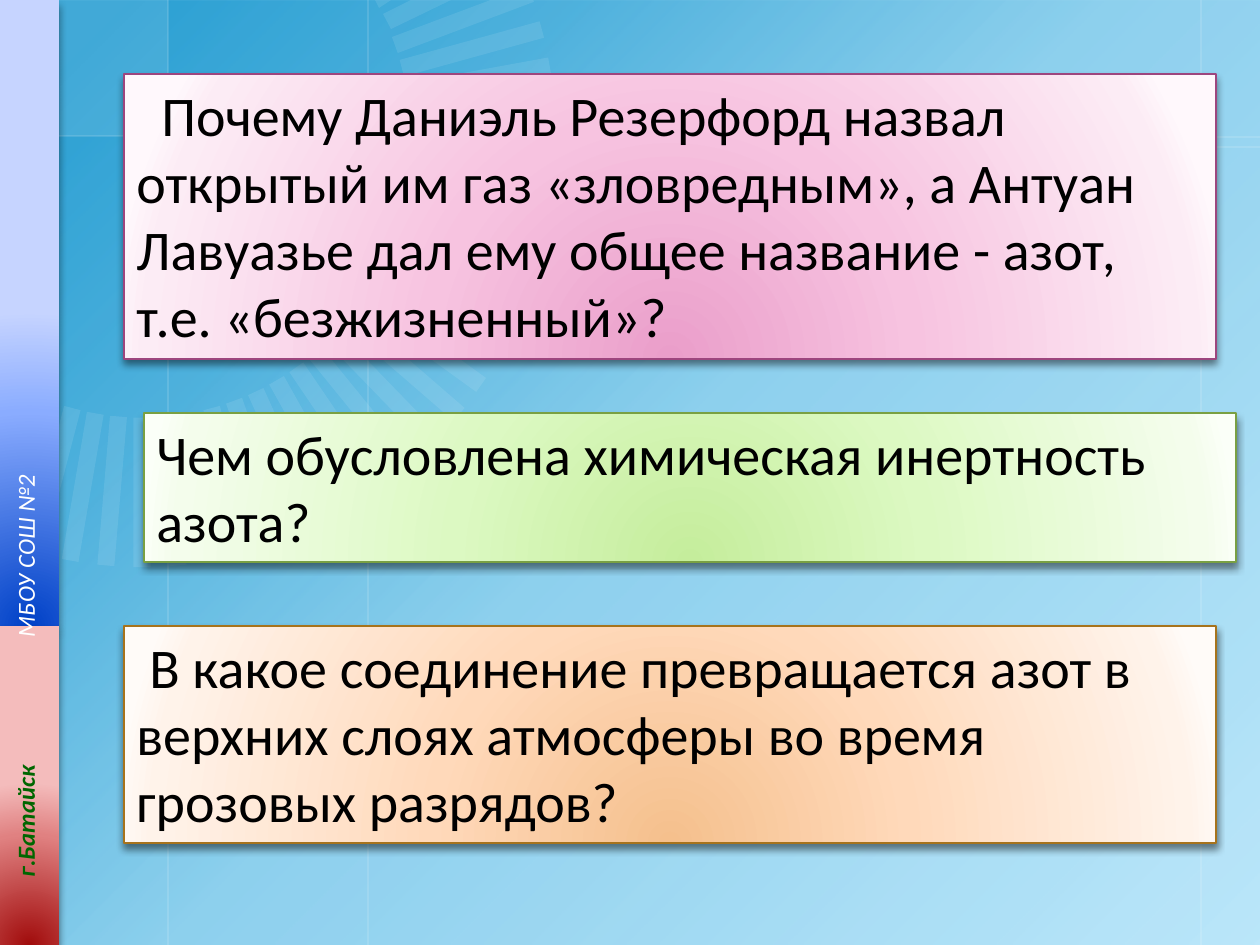
import math

import pptx
import pptx.dml.color
import pptx.enum.shapes
import pptx.enum.text
import pptx.oxml
import pptx.oxml.ns
import pptx.util

PX = 914400 / 126
FONT = "Calibri"
qn = pptx.oxml.ns.qn
RECTANGLE = pptx.enum.shapes.MSO_SHAPE.RECTANGLE
STRAIGHT = pptx.enum.shapes.MSO_CONNECTOR.STRAIGHT
GLOW = '<a:path path="circle"><a:fillToRect l="50000" t="130000" r="50000" b="-30000"/></a:path>'
DIAGONAL = '<a:lin ang="2700000" scaled="0"/>'


def px(length):
    return pptx.util.Emu(round(length * PX))


def color(value):
    return pptx.dml.color.RGBColor.from_string(value)


def xml(markup):
    """Parse markup, declaring the namespace on its first element."""
    return pptx.oxml.parse_xml(markup.replace(">", f' {pptx.oxml.ns.nsdecls("a")}>', 1))


def set_alpha(color_element, percent):
    color_element.append(xml(f'<a:alpha val="{percent * 1000}"></a:alpha>'))


def solid_fill(shape, value, alpha):
    shape.fill.solid()
    shape.fill.fore_color.rgb = color(value)
    shape.line.fill.background()
    shape.shadow.inherit = False
    set_alpha(shape._element.spPr.find(".//" + qn("a:srgbClr")), alpha)


def gradient_fill(shape, stops, direction):
    """Stops are (position, colour, opacity) in percent."""
    marks = "".join(
        f'<a:gs pos="{position * 1000}"><a:srgbClr val="{value}">'
        f'<a:alpha val="{alpha * 1000}"/></a:srgbClr></a:gs>'
        for position, value, alpha in stops)
    shape.fill.background()
    properties = shape._element.spPr
    properties.replace(
        properties.find(qn("a:noFill")),
        xml(f'<a:gradFill rotWithShape="1"><a:gsLst>{marks}</a:gsLst>{direction}</a:gradFill>'))


def add_rectangle(shapes, box):
    shape = shapes.add_shape(RECTANGLE, *map(px, box))
    shape.shadow.inherit = False
    shape.line.fill.background()
    return shape


def add_panel(shapes, box, stops):
    """Rectangle with a glow from below and a soft drop shadow."""
    shape = add_rectangle(shapes, box)
    gradient_fill(shape, [(position, value, 100) for position, value in stops], GLOW)
    shape._element.spPr.find(qn("a:effectLst")).append(xml(
        '<a:outerShdw blurRad="57150" dist="38100" dir="5400000" rotWithShape="0">'
        '<a:srgbClr val="000000"><a:alpha val="48000"/></a:srgbClr></a:outerShdw>'))
    return shape


def add_text(paragraph, text, size=32, value="000000", bold=False, italic=False):
    run = paragraph.add_run()
    run.text = text
    run.font.name = FONT
    run.font.size = pptx.util.Pt(size)
    run.font.color.rgb = color(value)
    run.font.bold = bold
    run.font.italic = italic


def draw_backdrop(slide, box):
    left, top, width, height = box
    slide.background.fill.solid()
    slide.background.fill.fore_color.rgb = color("BCE7FA")
    wash = add_rectangle(slide.shapes, box)
    gradient_fill(wash, [(position, "0F92CC", alpha) for position, alpha in
                         ((6, 83), (26, 63), (50, 27), (100, 0))], DIAGONAL)
    corner = add_rectangle(slide.shapes, (left, top, 168, 136))
    solid_fill(corner, "FFFFFF", 10)

    # Thin guide lines
    lines = [(x, 0, x, height) for x in (168, 1201, 368)]
    lines += [(0, 136, width, 137), (798, 147, width, 147)]
    for x1, y1, x2, y2 in lines:
        line = slide.shapes.add_connector(
            STRAIGHT, px(left + x1), px(top + y1), px(left + x2), px(top + y2))
        line.line.width = pptx.util.Pt(0.75)
        line.line.color.rgb = color("FFFFFF")
        properties = line._element.spPr
        set_alpha(properties.find(".//" + qn("a:srgbClr")), 20)
        properties.append(xml("<a:effectLst></a:effectLst>"))


def draw_fan(slide, box):
    """Rays every 5 degrees around the middle of the box."""
    left, top, width, height = box
    center_x, center_y = left + width / 2, top + height / 2
    inner, half_ray = 0.65, 8.5
    rays = []
    for degrees in range(-20, 111, 5):
        cosine = math.cos(math.radians(degrees))
        sine = math.sin(math.radians(degrees))
        rays.append([
            (center_x + width / 2 * reach * cosine - side * half_ray * sine,
             center_y + height / 2 * reach * sine + side * half_ray * cosine)
            for reach, side in ((inner, -1), (1, -1), (1, 1), (inner, 1))])
    # Rays cut by the slide edges
    rays += [
        [(375, 0), (391, 0), (379, 8)],
        [(411, 0), (451, 0), (391, 29), (383, 14)],
        [(19, 389), (34, 397), (0, 473), (0, 432)],
        [(0, 379), (13, 387), (0, 408)],
    ]
    group = slide.shapes.add_group_shape()
    for ray in rays:
        points = [(px(x), px(y)) for x, y in ray]
        builder = group.shapes.build_freeform(*points[0], scale=1.0)
        builder.add_line_segments(points[1:], close=True)
        solid_fill(builder.convert_to_shape(), "F2FAFE", 10)


def draw_question(slide, box, text, indent, border, stops):
    panel = add_panel(slide.shapes, box, stops)
    panel.line.color.rgb = color(border)
    panel.line.width = pptx.util.Pt(0.75)
    frame = panel.text_frame
    frame.word_wrap = True
    frame.auto_size = pptx.enum.text.MSO_AUTO_SIZE.SHAPE_TO_FIT_TEXT
    frame.vertical_anchor = pptx.enum.text.MSO_ANCHOR.TOP
    paragraph = frame.paragraphs[0]
    paragraph.alignment = pptx.enum.text.PP_ALIGN.LEFT
    paragraph._p.get_or_add_pPr().set("indent", str(px(indent)))
    add_text(paragraph, text)


def draw_sidebar(slide, box):
    left, top, width, height = box
    blue_height = 626
    add_panel(slide.shapes, (left, top, width, blue_height),
              [(0, "0041C7"), (68, "8AACFF"), (100, "C6D4FF")])
    add_panel(slide.shapes, (left, top + blue_height, width, height - blue_height),
              [(0, "A10C0C"), (68, "E08181"), (100, "F4BCBC")])

    # Caption reads from bottom to top
    length, thickness = 882, 50
    caption = slide.shapes.add_textbox(
        px(left + 25 - length / 2), px(top + height - length / 2 - thickness / 2),
        px(length), px(thickness))
    caption.rotation = 270
    frame = caption.text_frame
    frame.word_wrap = True
    frame.vertical_anchor = pptx.enum.text.MSO_ANCHOR.MIDDLE
    frame.margin_left = px(68)
    paragraph = frame.paragraphs[0]
    paragraph._p.get_or_add_pPr().append(xml(
        f'<a:tabLst><a:tab pos="{px(240)}" algn="l"/></a:tabLst>'))
    add_text(paragraph, "г.Батайск\t", size=14, value="006600", bold=True, italic=True)
    add_text(paragraph, "МБОУ СОШ №2", size=14, value="FFFFFF", italic=True)


QUESTIONS = [
    ((124, 74, 1092, 285),
     "Почему Даниэль Резерфорд назвал открытый им газ «зловредным», а Антуан "
     "Лавуазье дал ему общее название - азот, т.е. «безжизненный»?",
     25, "9D467E", [(0, "EA9ECA"), (43, "F7C3E0"), (93, "FCECF5"), (100, "FFF8FC")]),
    ((144, 413, 1092, 149),
     "Чем обусловлена химическая инертность азота?",
     0, "79A043", [(0, "C5ED9C"), (43, "DCF9C2"), (93, "F4FDEC"), (100, "FBFFF8")]),
    ((124, 626, 1092, 217),
     "В какое соединение превращается азот в верхних слоях атмосферы во время "
     "грозовых разрядов?",
     13, "A7731C", [(0, "F5C08D"), (43, "FFD9BA"), (93, "FFF3EA"), (100, "FFFBF8")]),
]


def main():
    presentation = pptx.Presentation()
    presentation.slide_width, presentation.slide_height = px(1260), px(945)
    slide = presentation.slides.add_slide(presentation.slide_layouts[6])
    draw_backdrop(slide, (0, 0, 1260, 945))
    draw_fan(slide, (-272, -287, 828, 854))
    for question in QUESTIONS:
        draw_question(slide, *question)
    draw_sidebar(slide, (0, 0, 59, 945))
    presentation.save("out.pptx")


if __name__ == "__main__":
    main()
